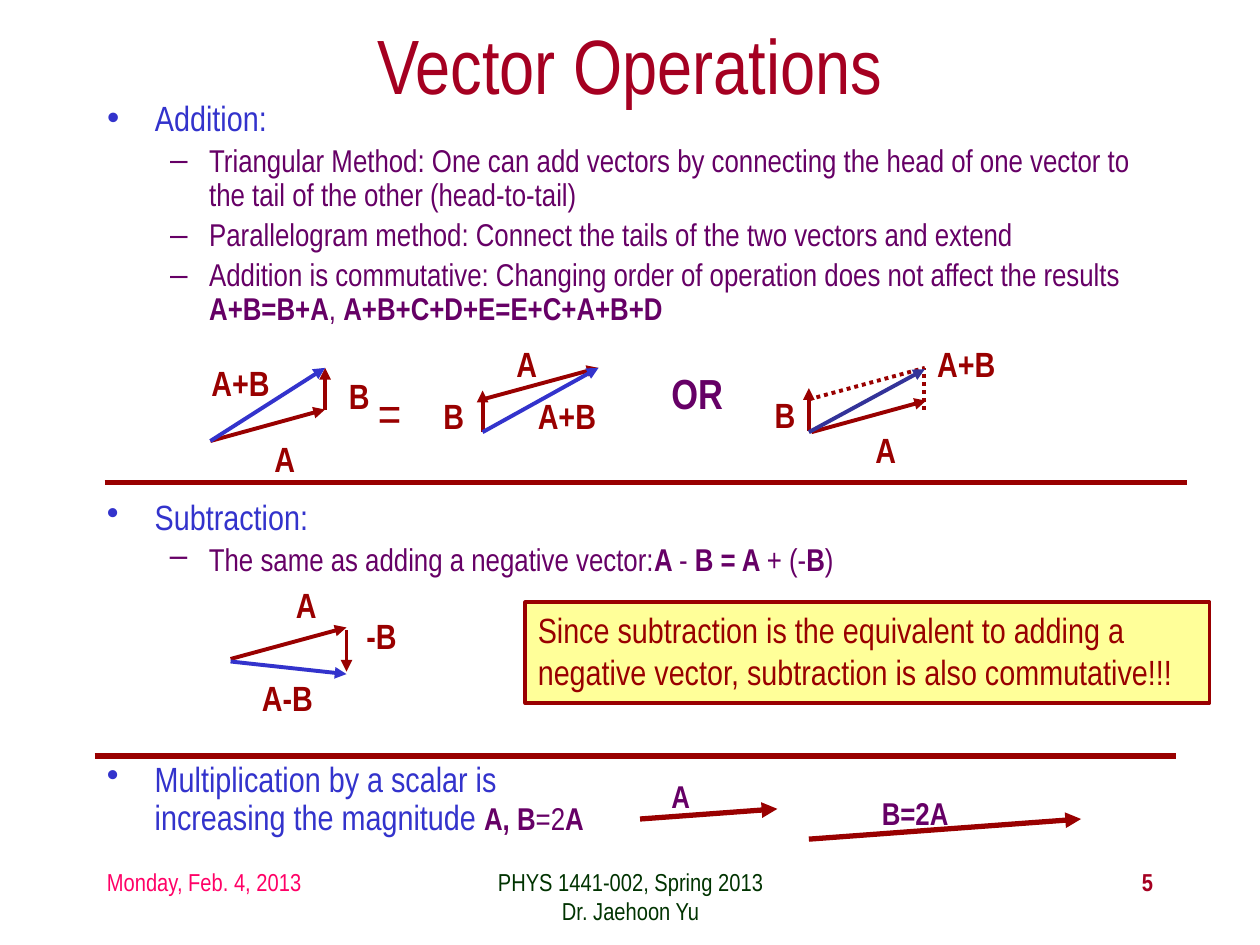
import dataclasses

import pptx
import pptx.dml.color
import pptx.enum.dml
import pptx.enum.shapes
import pptx.enum.text
import pptx.oxml.ns
import pptx.util
from lxml import etree

Inches = pptx.util.Inches
Pt = pptx.util.Pt
PP_ALIGN = pptx.enum.text.PP_ALIGN
ANCHOR = pptx.enum.text.MSO_ANCHOR


@dataclasses.dataclass(frozen=True)
class Theme:
    """Colours, type styles and paragraph levels of the slide."""

    font = "Arial Narrow"
    dark_red = "990000"
    blue = "3333CC"
    navy = "333399"
    purple = "660066"
    yellow = "FFFF99"
    thin = 2.25
    thick = 3
    styles = {
        "title": (44, "A50021", False),
        "topic": (20, blue, False),
        "detail": (18, purple, False),
        "label": (20, dark_red, True),
        "scalar": (18, purple, True),
        "equals": (28, dark_red, False),
        "or": (24, purple, True),
        "note": (20, dark_red, False),
        "date": (14, "FF0066", False),
        "course": (14, "003300", False),
        "number": (14, "A50021", True),
    }
    levels = [(0.38, -0.38, "•"), (0.81, -0.31, "–")]
    label_heights = {"label": 0.43, "scalar": 0.4, "equals": 0.57, "or": 0.5}


THEME = Theme()

ADDITION = [
    (0, [("topic", "Addition:")]),
    (1, [("detail", "Triangular Method: One can add vectors by connecting the head of one "
                    "vector to the tail of the other (head-to-tail)")]),
    (1, [("detail", "Parallelogram method: Connect the tails of the two vectors and extend")]),
    (1, [("detail", "Addition is commutative: Changing order of operation does not affect the "
                    "results *A+B=B+A*, *A+B+C+D+E=E+C+A+B+D*")]),
]
SUBTRACTION = [
    (0, [("topic", "Subtraction:")]),
    (1, [("detail", "The same as adding a negative vector:*A *- *B = A *+ (-*B*)")]),
]
MULTIPLICATION = [
    (0, [("topic", "Multiplication by a scalar is increasing the magnitude "),
         ("detail", "*A, B*=2*A*")]),
]

VECTORS = [
    ((1.67, 3.5), (2.58, 3.25), THEME.dark_red, THEME.thin),
    ((2.58, 3.25), (2.58, 2.92), THEME.dark_red, THEME.thin),
    ((1.67, 3.5), (2.58, 2.92), THEME.blue, THEME.thin),
    ((3.83, 3.17), (4.75, 2.92), THEME.dark_red, THEME.thin),
    ((3.83, 3.43), (3.83, 3.1), THEME.dark_red, THEME.thin),
    ((3.83, 3.43), (4.75, 2.92), THEME.blue, THEME.thin),
    ((6.44, 3.43), (7.35, 3.18), THEME.dark_red, THEME.thin),
    ((6.42, 3.42), (6.42, 3.08), THEME.dark_red, THEME.thin),
    ((6.42, 3.43), (7.34, 2.93), THEME.navy, THEME.thin),
    ((1.83, 5.23), (2.75, 4.98), THEME.dark_red, THEME.thin),
    ((2.75, 5), (2.75, 5.33), THEME.dark_red, THEME.thin),
    ((1.83, 5.25), (2.75, 5.35), THEME.blue, THEME.thin),
    ((5.08, 6.5), (6.17, 6.42), THEME.dark_red, THEME.thick),
    ((6.42, 6.66), (8.58, 6.5), THEME.dark_red, THEME.thick),
]
DOTTED_SIDES = [((7.33, 3.25), (7.33, 2.92)), ((6.42, 3.17), (7.34, 2.92))]
DIVIDERS = [((0.83, 3.83), (9.42, 3.83)), ((0.75, 6), (9.33, 6))]

LABELS = [
    ("A", 2.08, 3.42, 0.37, "label"),
    ("B", 2.67, 2.92, 0.37, "label"),
    ("A+B", 1.58, 2.82, 0.66, "label"),
    ("=", 2.9, 2.99, 0.39, "equals"),
    ("A", 4, 2.67, 0.37, "label"),
    ("B", 3.42, 3.08, 0.37, "label"),
    ("A+B", 4.17, 3.08, 0.66, "label"),
    ("OR", 5.23, 2.87, 0.61, "or"),
    ("A", 6.85, 3.35, 0.37, "label"),
    ("B", 6.05, 3.07, 0.37, "label"),
    ("A+B", 7.34, 2.67, 0.66, "label"),
    ("A", 2.25, 4.58, 0.37, "label"),
    ("-B", 2.81, 4.83, 0.44, "label"),
    ("A-B", 1.98, 5.32, 0.61, "label"),
    ("A", 5.23, 6.12, 0.35, "scalar"),
    ("B=2A", 6.9, 6.25, 0.73, "scalar"),
]


def rgb(value):
    """Return a colour from its hex digits."""
    return pptx.dml.color.RGBColor.from_string(value)


def set_values(target, values):
    """Set each named attribute of the target."""
    for name, value in values.items():
        setattr(target, name, value)


def add_xml(parent, tag, **attributes):
    """Append a drawing element to its parent."""
    return etree.SubElement(parent, pptx.oxml.ns.qn(tag), **attributes)


def place(shape, left, top, width, height):
    """Move and size a shape in inches."""
    set_values(shape, {"left": Inches(left), "top": Inches(top),
                       "width": Inches(width), "height": Inches(height)})


def prepare_frame(shape, wrap=True, anchor=ANCHOR.TOP):
    """Set wrapping and anchoring and return the text frame."""
    frame = shape.text_frame
    set_values(frame, {"word_wrap": wrap, "vertical_anchor": anchor,
                       "auto_size": pptx.enum.text.MSO_AUTO_SIZE.NONE})
    return frame


def write(paragraph, text, style):
    """Add text in a style, with starred passages in bold."""
    size, color, bold = THEME.styles[style]
    for index, piece in enumerate(text.split("*")):
        if piece:
            for line_index, line in enumerate(piece.split("\n")):
                if line_index:
                    paragraph.add_line_break()
                run = paragraph.add_run()
                run.text = line
                set_values(run.font, {"name": THEME.font, "size": Pt(size),
                                      "bold": bold or index % 2 == 1})
                run.font.color.rgb = rgb(color)


def add_text(slide, text, box, style, align=PP_ALIGN.LEFT, wrap=True):
    """Add a text box holding one paragraph."""
    shape = slide.shapes.add_textbox(*map(Inches, box))
    paragraph = prepare_frame(shape, wrap).paragraphs[0]
    paragraph.alignment = align
    write(paragraph, text, style)
    return paragraph


def fill_list(shape, items):
    """Write a bulleted list into a shape."""
    frame = prepare_frame(shape)
    for index, (level, runs) in enumerate(items):
        paragraph = frame.add_paragraph() if index else frame.paragraphs[0]
        margin, indent, bullet = THEME.levels[level]
        set_values(paragraph, {"level": level, "line_spacing": 0.9,
                               "space_before": Pt(3.6 if index else 0)})
        properties = paragraph._p.get_or_add_pPr()
        properties.set("marL", str(Inches(margin)))
        properties.set("indent", str(Inches(indent)))
        add_xml(properties, "a:buChar", char=bullet)
        for style, text in runs:
            write(paragraph, text, style)


def add_line(slide, start, end, color, width, arrow=False, dotted=False):
    """Add a straight line, optionally dotted or with an arrowhead."""
    connector = slide.shapes.add_connector(
        pptx.enum.shapes.MSO_CONNECTOR.STRAIGHT, *map(Inches, start + end))
    connector.line.color.rgb = rgb(color)
    connector.line.width = Pt(width)
    if dotted:
        connector.line.dash_style = pptx.enum.dml.MSO_LINE.ROUND_DOT
    if arrow:
        add_xml(connector.line._get_or_add_ln(), "a:tailEnd", type="triangle")
    add_xml(connector._element.spPr, "a:effectLst")


def add_note(slide, text, box):
    """Add the framed remark."""
    shape = slide.shapes.add_shape(pptx.enum.shapes.MSO_SHAPE.RECTANGLE, *map(Inches, box))
    shape.shadow.inherit = False
    shape.fill.solid()
    shape.fill.fore_color.rgb = rgb(THEME.yellow)
    shape.line.color.rgb = rgb(THEME.dark_red)
    shape.line.width = Pt(THEME.thin)
    paragraph = prepare_frame(shape).paragraphs[0]
    paragraph.alignment = PP_ALIGN.LEFT
    write(paragraph, text, "note")


def add_footer(slide):
    """Add the date, the course and the slide number."""
    add_text(slide, "Monday, Feb. 4, 2013", (0.75, 6.83, 2.08, 0.5), "date")
    course = add_text(slide, "PHYS 1441-002, Spring 2013\nDr. Jaehoon Yu",
                      (3.42, 6.83, 3.17, 0.5), "course", PP_ALIGN.CENTER)
    course._p.get_or_add_pPr().set("indent", str(Inches(-0.8)))
    add_text(slide, "5", (7.17, 6.83, 2.08, 0.5), "number", PP_ALIGN.RIGHT)


def main():
    """Build the slide and save it."""
    presentation = pptx.Presentation()
    set_values(presentation, {"slide_width": Inches(10), "slide_height": Inches(7.5)})
    slide = presentation.slides.add_slide(presentation.slide_layouts[1])
    title, body = slide.placeholders
    place(title, 0.75, 0.17, 8.5, 0.67)
    heading = prepare_frame(title, anchor=ANCHOR.MIDDLE).paragraphs[0]
    heading.alignment = PP_ALIGN.CENTER
    write(heading, "Vector Operations", "title")
    place(body, 0.75, 0.75, 8.5, 1.83)
    fill_list(body, ADDITION)
    for items, box in ((SUBTRACTION, (0.75, 3.92, 8.5, 0.83)),
                       (MULTIPLICATION, (0.75, 6, 4, 0.67))):
        fill_list(slide.shapes.add_textbox(*map(Inches, box)), items)
    for start, end in DIVIDERS:
        add_line(slide, start, end, THEME.dark_red, THEME.thick)
    for start, end in DOTTED_SIDES:
        add_line(slide, start, end, THEME.dark_red, THEME.thin, dotted=True)
    for vector in VECTORS:
        add_line(slide, *vector, arrow=True)
    for text, left, top, width, style in LABELS:
        add_text(slide, text, (left, top, width, THEME.label_heights[style]), style, wrap=False)
    add_note(slide, "Since subtraction is the equivalent to adding a negative vector, "
                    "subtraction is also commutative!!!", (4.17, 4.78, 5.43, 0.8))
    add_footer(slide)
    presentation.save("out.pptx")


if __name__ == "__main__":
    main()
